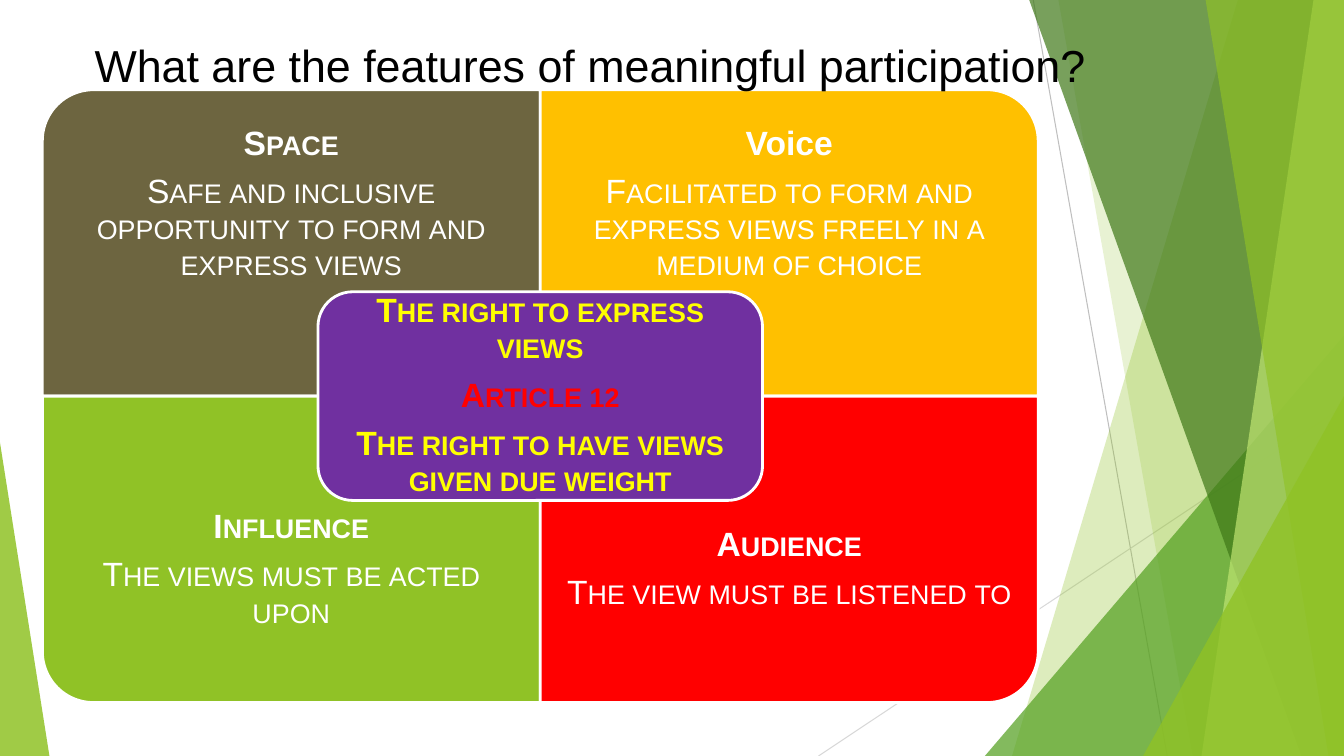
from pptx import Presentation
from pptx.dml.color import RGBColor
from pptx.enum.shapes import MSO_CONNECTOR, MSO_SHAPE
from pptx.enum.text import MSO_ANCHOR, MSO_AUTO_SIZE, PP_ALIGN
from pptx.oxml.ns import qn
from pptx.util import Inches, Pt
from lxml import etree

STRAIGHT = MSO_CONNECTOR.STRAIGHT
TRIANGLE = MSO_SHAPE.ISOSCELES_TRIANGLE
ONE_ROUND = MSO_SHAPE.ROUND_1_RECTANGLE
ROUNDED = MSO_SHAPE.ROUNDED_RECTANGLE
MIDDLE = MSO_ANCHOR.MIDDLE
CENTER = PP_ALIGN.CENTER
GROW = MSO_AUTO_SIZE.SHAPE_TO_FIT_TEXT

THEME = {
    "font": "Arial", "title": 32, "body": 24, "gap": 8.4,
    "black": "000000", "white": "FFFFFF", "yellow": "FFFF00", "red": "FF0000",
    "olive": "6D6540", "gold": "FFC000", "lime": "90C226", "purple": "7030A0",
    "green": "54A021", "forest": "3F7818", "pale": "BFE471",
    "grey": "BFBFBF", "silver": "D8D8D8",
}

deck = Presentation()
deck.slide_width, deck.slide_height = Inches(13.33), Inches(7.5)
page = deck.slides.add_slide(deck.slide_layouts[6])
across = deck.slide_width / 100
down = deck.slide_height / 100


def color(name):
    return RGBColor.from_string(THEME[name])


def write(frame, lines, inset, bottom):
    frame.word_wrap = True
    frame.vertical_anchor = MIDDLE
    frame.margin_left = frame.margin_right = frame.margin_top = Inches(inset)
    frame.margin_bottom = Inches(bottom)
    for index, (text, ink, bold, small) in enumerate(lines):
        para = frame.add_paragraph() if index else frame.paragraphs[0]
        para.alignment = CENTER
        para.line_spacing = 0.9
        para.space_after = Pt(THEME["gap"])
        span = para.add_run()
        span.text = text
        span.font.name, span.font.size = THEME["font"], Pt(THEME["body"])
        span.font.bold = bold
        span.font.color.rgb = color(ink)
        if small:
            span.font._element.set("cap", "small")


for x1, y1, x2, y2, ink in [(76.88, 0, 86.85, 100, "grey"),
                            (100, 53.73, 60.9, 100, "silver")]:
    ray = page.shapes.add_connector(STRAIGHT, int(x1 * across), int(y1 * down),
                                    int(x2 * across), int(y2 * down))
    ray.line.color.rgb = color(ink)
    ray.line.width = Pt(0.75)
    etree.SubElement(ray._element.spPr, qn("a:effectLst"))

# kind, then top and bottom x for a facet, or left, top, right and apex for a triangle
facets = [
    ("facet", (92.1, 75.3), "lime", 30),
    ("facet", (78.75, 88.73), "lime", 20),
    ("triangle", (73.28, 44.4, 100, 1), "green", 72),
    ("facet", (76.58, 96.83), "forest", 70),
    ("facet", (97.73, 89.4), "pale", 70),
    ("facet", (89.7, 98.85), "lime", 65),
    ("triangle", (85.05, 52.4, 100, 1), "lime", 80),
    ("triangle", (0, 58.53, 3.68, 0), "lime", 85),
]
for kind, place, ink, opacity in facets:
    if kind == "facet":
        top_x, bottom_x = place
        outline = page.shapes.build_freeform(int(top_x * across), 0)
        outline.add_line_segments([(int(x * across), int(y * down)) for x, y in
                                   [(100, 0), (100, 100), (bottom_x, 100)]])
        shard = outline.convert_to_shape()
    else:
        left, top, right, apex = place
        shard = page.shapes.add_shape(TRIANGLE, int(left * across), int(top * down),
                                      int((right - left) * across), int((100 - top) * down))
        shard.adjustments[0] = apex
    shard.shadow.inherit = False
    shard.line.fill.background()
    shard.fill.solid()
    shard.fill.fore_color.rgb = color(ink)
    tint = shard._element.spPr.find(".//" + qn("a:srgbClr"))
    etree.SubElement(tint, qn("a:alpha")).set("val", str(opacity * 1000))

grid_left, grid_top = 3.15 * across, 11.87 * down
column, row = 37.05 * across, 40.53 * down

quadrants = [
    (0, 0, 270, "olive", "Space", True,
     "Safe and inclusive opportunity to form and express views"),
    (1, 0, 0, "gold", "Voice", False,
     "Facilitated to form and express views freely in a medium of choice"),
    (0, 1, 180, "lime", "Influence", True, "The views must be acted upon"),
    (1, 1, 90, "red", "Audience", True, "The view must be listened to"),
]
for col, line, turn, ink, heading, small, detail in quadrants:
    left, top = grid_left + col * column, grid_top + line * row
    width, height = (row, column) if turn % 180 else (column, row)
    panel = page.shapes.add_shape(ONE_ROUND, int(left + (column - width) / 2),
                                  int(top + (row - height) / 2), int(width), int(height))
    panel.rotation = turn
    panel.shadow.inherit = False
    panel.fill.solid()
    panel.fill.fore_color.rgb = color(ink)
    panel.line.color.rgb = color("white")
    panel.line.width = Pt(2)
    box = page.shapes.add_textbox(int(left), int(top + line * row / 4),
                                  int(column), int(row * 3 / 4))
    write(box.text_frame, [(heading, "white", True, small), (detail, "white", False, True)],
          0.19, 0.54 if line else 0.19)

hub_width, hub_height = 33.08 * across, 27.6 * down
hub = page.shapes.add_shape(ROUNDED, int(grid_left + column - hub_width / 2),
                            int(grid_top + row - hub_height / 2),
                            int(hub_width), int(hub_height))
hub.shadow.inherit = False
hub.fill.solid()
hub.fill.fore_color.rgb = color("purple")
hub.line.color.rgb = color("white")
hub.line.width = Pt(2)
write(hub.text_frame, [("The right to express views", "yellow", True, True),
                       ("Article 12", "red", True, True),
                       ("The right to have views given due weight", "yellow", True, True)],
      0.1, 0.1)

title = page.shapes.add_textbox(int(6.3 * across), int(4.27 * down),
                                int(76.82 * across), int(8.53 * down))
title.text_frame.word_wrap = False
title.text_frame.auto_size = GROW
span = title.text_frame.paragraphs[0].add_run()
span.text = "What are the features of meaningful participation?"
span.font.name, span.font.size = THEME["font"], Pt(THEME["title"])
span.font.color.rgb = color("black")

deck.save("out.pptx")
